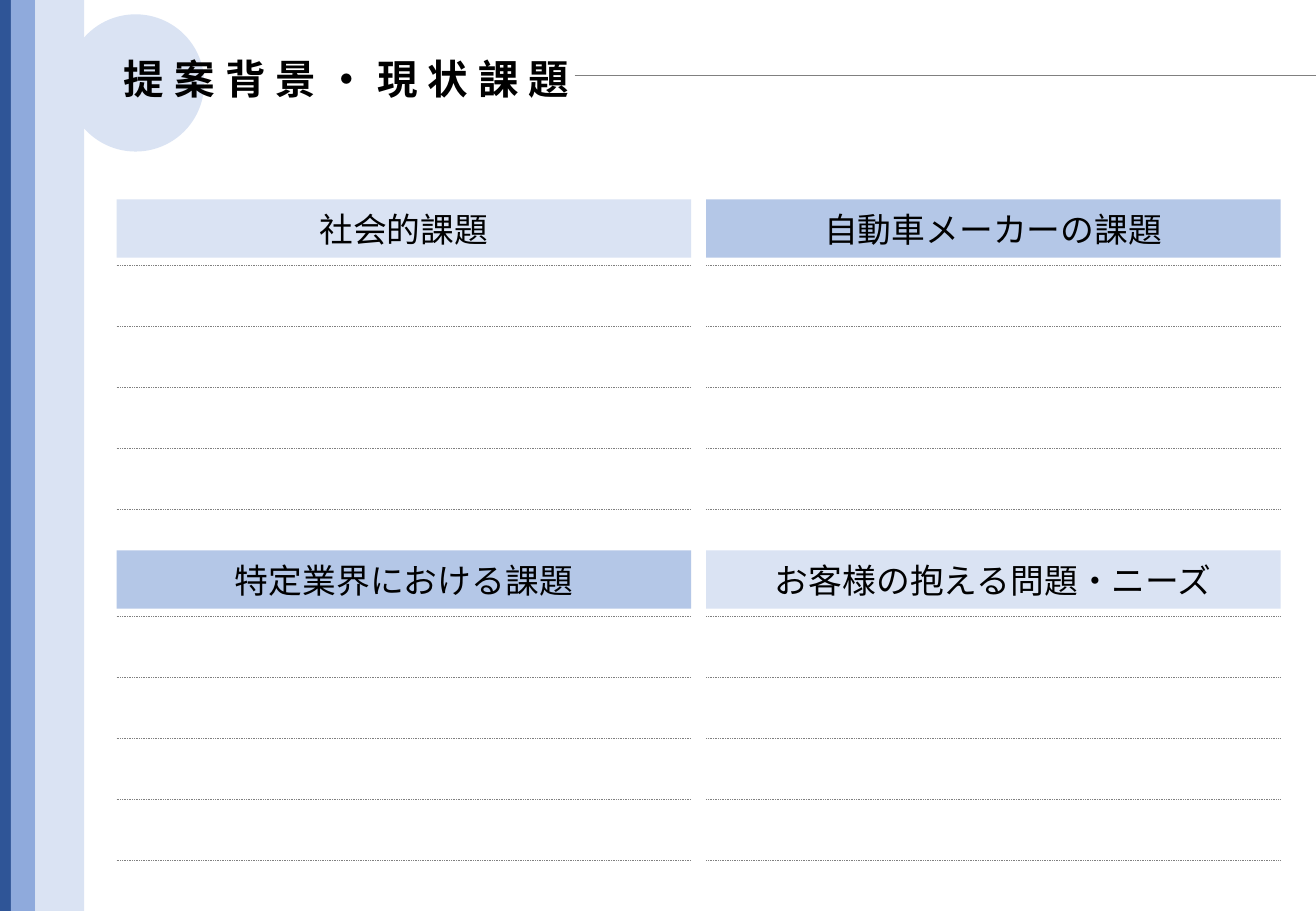
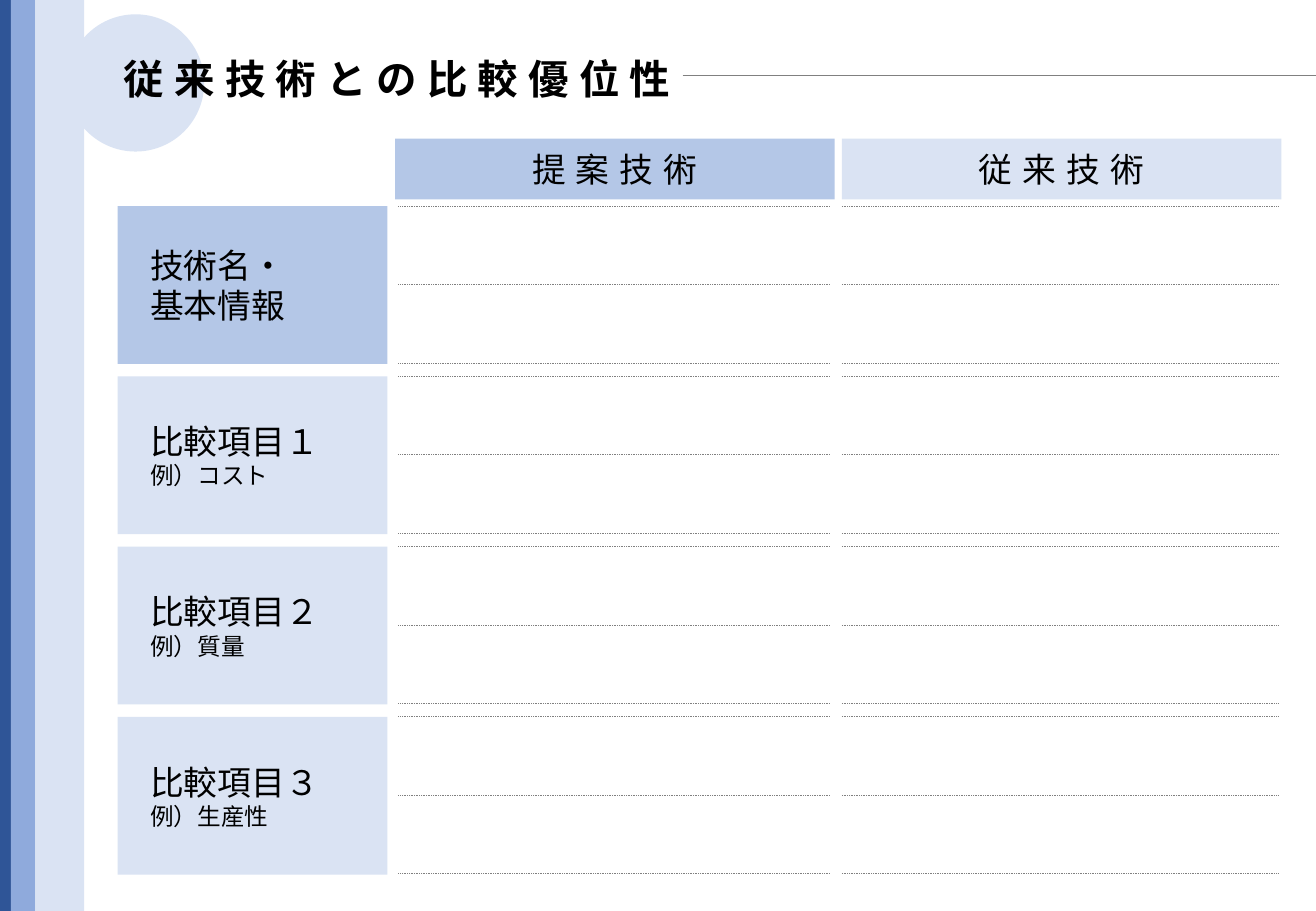
"""Build two worksheet slides: current issues and a technology comparison."""
from lxml import etree
from pptx import Presentation, util as u
from pptx.dml.color import RGBColor
from pptx.enum import dml, shapes, text
from pptx.oxml.ns import qn

FONT = "Noto Sans CJK JP"
NAVY, BLUE, MID, PALE, GRAY, BLACK = "2F5597", "8FAADC", "B4C7E7", "DAE3F3", "808080", "000000"
PAGE_WIDTH, PAGE_HEIGHT = 27.51, 19.05
BANDS = [(0.23, NAVY), (0.51, BLUE), (1.02, PALE)]

BACKGROUND = {"title": "提案背景・現状課題", "title_width": 10.4, "rule_start": 12.01}
ISSUES = [
    [("社会的課題", PALE), ("自動車メーカーの課題", MID)],
    [("特定業界における課題", MID), ("お客様の抱える問題・ニーズ", PALE)],
]
COMPARISON = {"title": "従来技術との比較優位性", "title_width": 21.3, "rule_start": 14.27}
TECHNOLOGIES = [("提案技術", MID, 8.26, 8.33, 17.35), ("従来技術", PALE, 17.6, 17.6, 26.72)]
CRITERIA = [
    ([("技術名・", 20), ("基本情報", 20)], MID),
    ([("比較項目１", 20), ("例）コスト", 14)], PALE),
    ([("比較項目２", 20), ("例）質量", 14)], PALE),
    ([("比較項目３", 20), ("例）生産性", 14)], PALE),
]


def color(value):
    return RGBColor.from_string(value)


def apply(target, values):
    for name, value in values.items():
        setattr(target, name, value)


def write(holder, lines, align, inset=0.25, bold=False, spacing=0):
    frame = holder.text_frame
    apply(frame, {
        "word_wrap": True, "auto_size": text.MSO_AUTO_SIZE.NONE,
        "vertical_anchor": text.MSO_ANCHOR.MIDDLE, "margin_left": u.Cm(inset),
        "margin_right": u.Cm(0.25), "margin_top": 0, "margin_bottom": 0,
    })
    for index, (words, size) in enumerate(lines):
        paragraph = frame.add_paragraph() if index else frame.paragraphs[0]
        apply(paragraph, {"alignment": align, "line_spacing": u.Pt(size * 1.2)})
        run = paragraph.add_run()
        run.text = words
        run.font.color.rgb = color(BLACK)
        apply(run.font, {"name": FONT, "size": u.Pt(size), "bold": bold})
        properties = run._r.get_or_add_rPr()
        properties.set("spc", str(spacing * 100))
        etree.SubElement(properties, qn("a:ea")).set("typeface", FONT)


def block(slide, left, top, width, height, fill, kind=shapes.MSO_SHAPE.RECTANGLE):
    panel = slide.shapes.add_shape(kind, *map(u.Cm, (left, top, width, height)))
    panel.shadow.inherit = False
    panel.fill.solid()
    panel.fill.fore_color.rgb = color(fill)
    panel.line.fill.background()
    return panel


def rule(slide, start, end, y, dash=dml.MSO_LINE.ROUND_DOT):
    stroke = slide.shapes.add_connector(
        shapes.MSO_CONNECTOR.STRAIGHT, *map(u.Cm, (start, y, end, y)))
    stroke.line.color.rgb = color(GRAY)
    apply(stroke.line, {"width": u.Pt(0.5), "dash_style": dash})
    etree.SubElement(stroke._element.spPr, qn("a:effectLst"))


def writing_lines(slide, start, end, top, count, pitch):
    for index in range(count):
        rule(slide, start, end, top + index * pitch)


def new_slide(deck, title, title_width, rule_start):
    slide = deck.slides.add_slide(deck.slide_layouts[5])
    block(slide, 1.4, 0.3, 2.87, 2.87, PALE, shapes.MSO_SHAPE.OVAL)
    left = 0
    for width, fill in BANDS:
        block(slide, left, 0, width, PAGE_HEIGHT, fill)
        left += width
    heading = slide.shapes.title
    apply(heading, {"left": u.Cm(2.34), "top": u.Cm(0.98),
                    "width": u.Cm(title_width), "height": u.Cm(1.3)})
    write(heading, [(title, 24)], text.PP_ALIGN.LEFT, bold=True, spacing=6)
    slide.shapes._spTree.append(heading._element)
    rule(slide, rule_start, PAGE_WIDTH, 1.57, dml.MSO_LINE.SOLID)
    return slide


def build_background(deck):
    slide = new_slide(deck, **BACKGROUND)
    width, gap = 12.01, 0.31
    for row, issues in enumerate(ISSUES):
        top = 4.17 + row * 7.34
        for column, (issue, fill) in enumerate(issues):
            left = 2.44 + column * (width + gap)
            header = block(slide, left, top, width, 1.22, fill)
            write(header, [(issue, 20)], text.PP_ALIGN.CENTER)
            writing_lines(slide, left, left + width, top + 1.37, 5, 1.28)


def build_comparison(deck):
    slide = new_slide(deck, **COMPARISON)
    for technology, fill, left, _, _ in TECHNOLOGIES:
        header = block(slide, left, 2.9, 9.19, 1.27, fill)
        write(header, [(technology, 20)], text.PP_ALIGN.CENTER, spacing=6)
    for row, (criterion, fill) in enumerate(CRITERIA):
        top = 4.31 + row * 3.56
        label = block(slide, 2.46, top, 5.64, 3.3, fill)
        write(label, criterion, text.PP_ALIGN.LEFT, inset=0.68)
        for _, _, _, start, end in TECHNOLOGIES:
            writing_lines(slide, start, end, top, 3, 1.64)


def main():
    deck = Presentation()
    apply(deck, {"slide_width": u.Cm(PAGE_WIDTH), "slide_height": u.Cm(PAGE_HEIGHT)})
    build_background(deck)
    build_comparison(deck)
    deck.save("out.pptx")


if __name__ == "__main__":
    main()
